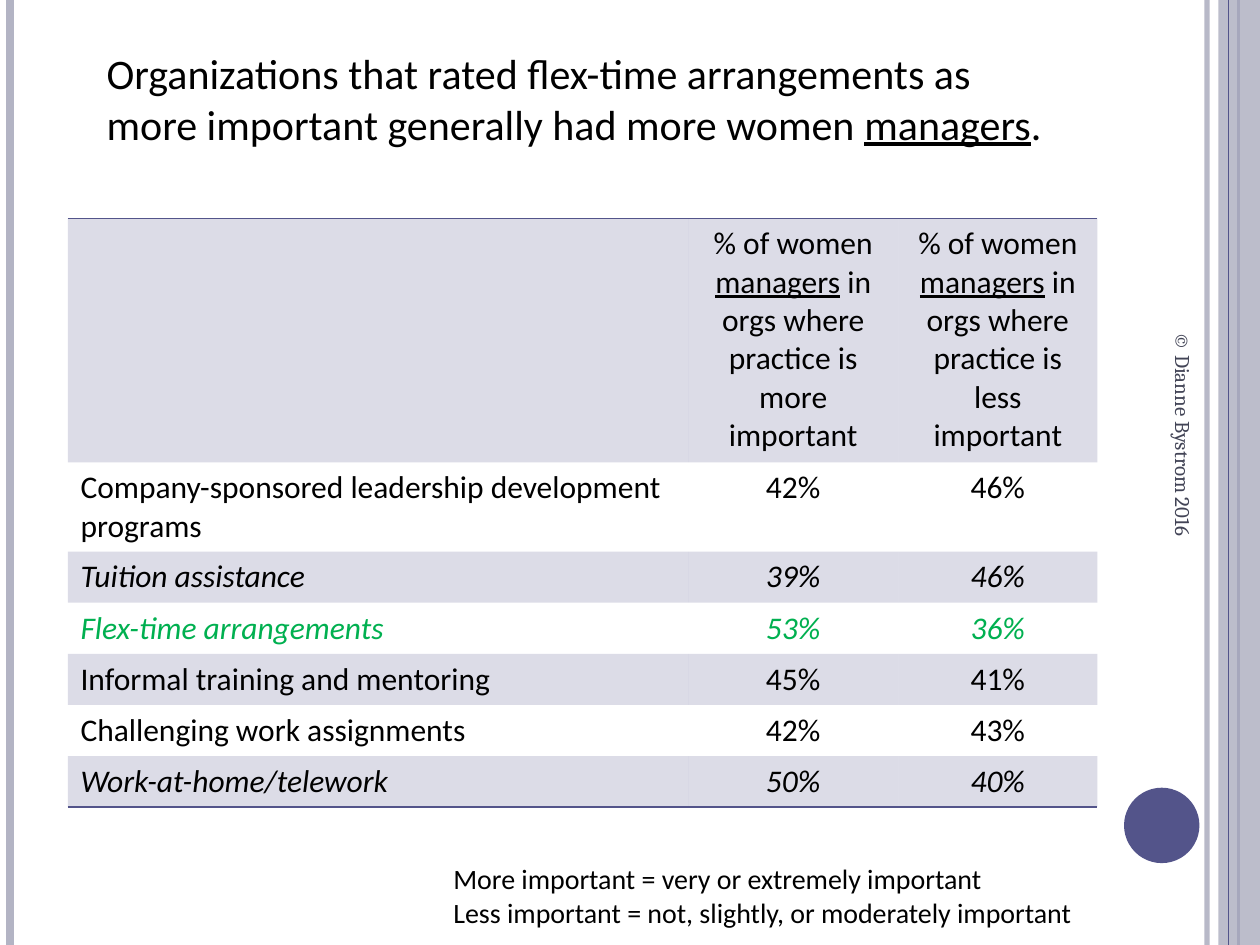
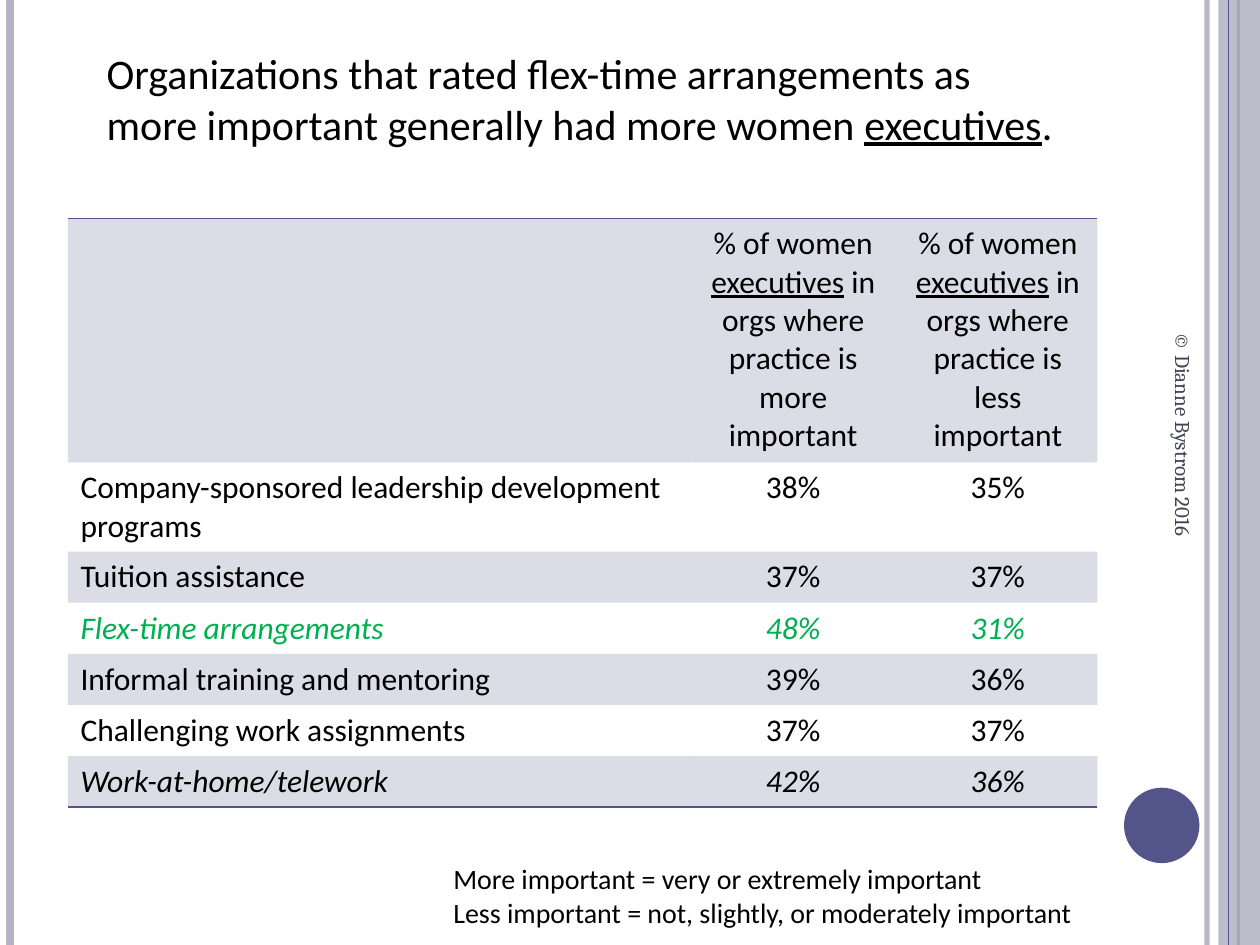
"""Build two slides on flex-time practice and the share of women leaders."""
import pptx
import pptx.dml.color
import pptx.enum.shapes
import pptx.enum.text
import pptx.oxml
import pptx.oxml.ns
import pptx.util
from pptx.util import Cm, Pt

RGB = pptx.dml.color.RGBColor
INDIGO = RGB(0x53, 0x54, 0x8A)
MIST = RGB(0xB3, 0xB4, 0xC4)
SLATE = RGB(0x42, 0x44, 0x56)
GREEN = RGB(0x00, 0xB0, 0x50)
BLACK = RGB(0, 0, 0)
SHAPE = pptx.enum.shapes.MSO_SHAPE
ALIGN = pptx.enum.text.PP_ALIGN
ANCHOR = pptx.enum.text.MSO_ANCHOR
FIT = pptx.enum.text.MSO_AUTO_SIZE
PLAIN_GRID = "{2D5ABB26-0587-4C30-8999-92F81FD0307C}"

GROUPS = [
    {"role": "managers",
     "italic": {"Tuition assistance", "Flex-time arrangements", "Work-at-home/telework"},
     "rates": [(42, 46), (39, 46), (53, 36), (45, 41), (42, 43), (50, 40)]},
    {"role": "executives",
     "italic": {"Flex-time arrangements", "Work-at-home/telework"},
     "rates": [(38, 35), (37, 37), (48, 31), (39, 36), (37, 37), (42, 36)]},
]
TOPICS = [
    "Company-sponsored leadership development programs", "Tuition assistance",
    "Flex-time arrangements", "Informal training and mentoring",
    "Challenging work assignments", "Work-at-home/telework",
]
FOCUS = "Flex-time arrangements"
LEVELS = ["more", "less"]
TITLE = "Organizations that rated flex-time arrangements as more important generally had more women "
NOTES = ["More important = very or extremely important",
         "Less important = not, slightly, or moderately important"]
CREDIT = "© Dianne Bystrom 2016"

WIDE, HIGH = Cm(25.4), Cm(19.05)
BACK_RULES = [(24.33, 3, MIST, 93), (0.2, 4.5, MIST, 100), (24.97, 1.5, INDIGO, 100)]
FRONT_RULE = (24.77, 0.75, INDIGO, 100)
COLS = [12.5, 4.24, 4.01]
ROWS = [4.92, 1.8] + [1.03] * 5
BODY = {"name": "Calibri", "size": Pt(18)}
NOTE = {"name": "Calibri", "size": Pt(16)}
HEAD = {"name": "Calibri", "size": Pt(24)}
FOOT = {"name": "Cambria", "size": Pt(12)}


def fade(node, percent):
    """Set the opacity of the first colour in an element."""
    tint = next(node.iter(pptx.oxml.ns.qn("a:srgbClr")))
    pptx.oxml.ns.qn("a:alpha")
    alpha = tint.makeelement(pptx.oxml.ns.qn("a:alpha"), {"val": str(percent * 1000)})
    tint.append(alpha)


def write(para, parts, form, color=BLACK, align=ALIGN.LEFT):
    """Write (text, extra format) parts into a paragraph."""
    para.alignment = align
    for text, extra in parts:
        run = para.add_run()
        run.text = text
        for key, value in {**form, **extra}.items():
            setattr(run.font, key, value)
        run.font.color.rgb = color


def add_rule(slide, left, weight, color, alpha):
    """Draw one full-height rule."""
    rule = slide.shapes.add_connector(
        pptx.enum.shapes.MSO_CONNECTOR.STRAIGHT, Cm(left), 0, Cm(left), HIGH)
    rule.line.width = Pt(weight)
    rule.line.color.rgb = color
    props = rule.element.spPr
    if alpha < 100:
        fade(props, alpha)
    props.append(props.makeelement(pptx.oxml.ns.qn("a:effectLst"), {}))


def add_solid(slide, kind, box, color):
    """Draw a filled shape with no outline."""
    shape = slide.shapes.add_shape(kind, *map(Cm, box))
    shape.shadow.inherit = False
    shape.fill.solid()
    shape.fill.fore_color.rgb = color
    shape.line.fill.background()
    return shape


def add_text(slide, box, lines, form, color=BLACK, **frame):
    """Add a text box with one paragraph per line of parts."""
    shape = slide.shapes.add_textbox(*map(Cm, box))
    body = shape.text_frame
    for key, value in {"word_wrap": True, **frame}.items():
        setattr(body, key, value)
    for index, parts in enumerate(lines):
        para = body.add_paragraph() if index else body.paragraphs[0]
        write(para, parts, form, color)
    return shape


def add_frame(slide):
    """Draw the side bands, rules, disc and credit."""
    for rule in BACK_RULES:
        add_rule(slide, *rule)
    band = add_solid(slide, SHAPE.RECTANGLE, (24.56, 0, 0.84, 19.05), MIST)
    fade(band.element.spPr, 87)
    add_rule(slide, *FRONT_RULE)
    add_solid(slide, SHAPE.OVAL, (22.66, 15.88, 1.52, 1.52), INDIGO)
    foot = add_text(slide, (19.41, 10.39, 8.89, 1.02), [[(CREDIT, {})]], FOOT, SLATE,
                    vertical_anchor=ANCHOR.MIDDLE)
    foot.rotation = 90


def add_edge(cell_node, side):
    """Draw an indigo border on one side of a cell."""
    edge = pptx.oxml.parse_xml(
        f'<a:{side} {pptx.oxml.ns.nsdecls("a")} w="12700"><a:solidFill>'
        f'<a:srgbClr val="{INDIGO}"/></a:solidFill></a:{side}>')
    cell_node.get_or_add_tcPr().insert(0, edge)


def add_rates(slide, group):
    """Add the table of rates for one group of women."""
    role = (group["role"], {"underline": True})
    heads = [[("% of women ", {}), role, (f" in orgs where practice is {level} important", {})]
             for level in LEVELS]
    grid = [[[]] + heads]
    for topic, rates in zip(TOPICS, group["rates"]):
        style = {"italic": topic in group["italic"]}
        grid.append([[(text, style)] for text in [topic] + [f"{rate}%" for rate in rates]])

    frame = slide.shapes.add_table(len(ROWS), len(COLS), Cm(1.37), Cm(4.4),
                                   Cm(sum(COLS)), Cm(sum(ROWS)))
    table = frame.table
    table.first_row = table.horz_banding = False
    next(frame.element.iter(pptx.oxml.ns.qn("a:tableStyleId"))).text = PLAIN_GRID
    for col, width in zip(table.columns, COLS):
        col.width = Cm(width)
    for row, height in zip(table.rows, ROWS):
        row.height = Cm(height)

    nodes = frame.element.iter(pptx.oxml.ns.qn("a:tc"))
    for r, line in enumerate(grid):
        color = GREEN if r and TOPICS[r - 1] == FOCUS else BLACK
        for c, parts in enumerate(line):
            cell, node = table.cell(r, c), next(nodes)
            write(cell.text_frame.paragraphs[0], parts, BODY, color,
                  ALIGN.CENTER if c else ALIGN.LEFT)
            if r % 2:
                cell.fill.background()
            else:
                cell.fill.solid()
                cell.fill.fore_color.rgb = INDIGO
                fade(node, 20) if not parts else fade(node.tcPr, 20)
            if r == 0:
                add_edge(node, "lnT")
            if r == len(grid) - 1:
                add_edge(node, "lnB")


def main():
    """Build and save the deck."""
    deck = pptx.Presentation()
    deck.slide_width, deck.slide_height = WIDE, HIGH
    for group in GROUPS:
        slide = deck.slides.add_slide(deck.slide_layouts[6])
        add_frame(slide)
        add_rates(slide, group)
        add_text(slide, (8.89, 17.25, 13.13, 1.63), [[(note, {})] for note in NOTES], NOTE,
                 word_wrap=False, auto_size=FIT.SHAPE_TO_FIT_TEXT)
        title = [(TITLE, {}), (group["role"], {"underline": True}), (".", {})]
        add_text(slide, (1.9, 0.84, 19.69, 2.31), [title], HEAD,
                 auto_size=FIT.SHAPE_TO_FIT_TEXT)
    deck.save("out.pptx")


if __name__ == "__main__":
    main()
